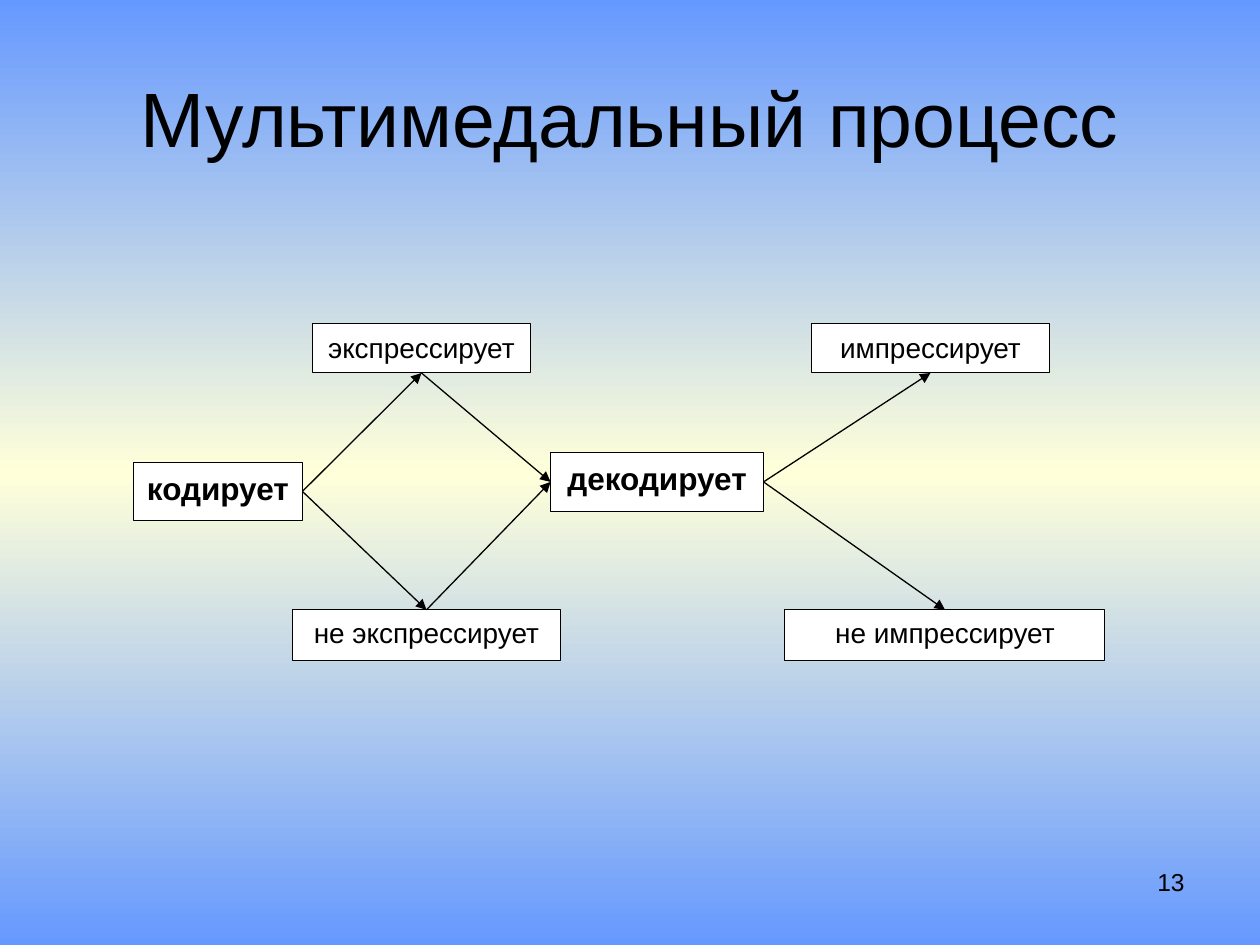
from copy import deepcopy
from dataclasses import dataclass

from pptx import Presentation
from pptx.dml.color import RGBColor as RGB
from pptx.enum.shapes import MSO_CONNECTOR as Conn, MSO_SHAPE as Kind
from pptx.enum.text import MSO_ANCHOR as Anchor, PP_ALIGN as Align
from pptx.oxml.ns import qn
from pptx.oxml.xmlchemy import OxmlElement as Elem
from pptx.shapes.autoshape import Shape
from pptx.slide import Slide
from pptx.util import Inches, Pt


@dataclass(frozen=True)
class Theme:
    font: str = "Arial"
    ink: RGB = RGB(0, 0, 0)
    box: RGB = RGB(255, 255, 255)
    sky: RGB = RGB(0x66, 0x99, 0xFF)
    glow: RGB = RGB(0xFF, 0xFF, 0xD9)
    title: int = 44
    main: int = 18
    state: int = 16
    page: int = 14
    edge: float = 0.5
    arrow: float = 0.75


@dataclass(frozen=True)
class Node:
    text: str
    left: float
    top: float
    width: float
    height: float
    main: bool = False


@dataclass(frozen=True)
class Link:
    start: str
    out: int
    end: str
    into: int


THEME = Theme()

# Connection sites of a rectangle
TOP, LEFT, BOTTOM, RIGHT = range(4)

# Rows of the two outcomes
UPPER, LOWER = 2.57, 4.84

NODES = {
    "express": Node("экспрессирует", 2.48, UPPER, 1.73, 0.39),
    "code": Node("кодирует", 1.06, 3.67, 1.34, 0.46, True),
    "no_express": Node("не экспрессирует", 2.32, LOWER, 2.13, 0.4),
    "impress": Node("импрессирует", 6.44, UPPER, 1.89, 0.39),
    "no_impress": Node("не импрессирует", 6.23, LOWER, 2.54, 0.4),
    "decode": Node("декодирует", 4.37, 3.59, 1.69, 0.47, True),
}

LINKS = [
    Link("code", RIGHT, "no_express", TOP),
    Link("code", RIGHT, "express", BOTTOM),
    Link("express", BOTTOM, "decode", LEFT),
    Link("no_express", TOP, "decode", LEFT),
    Link("decode", RIGHT, "impress", BOTTOM),
    Link("decode", RIGHT, "no_impress", TOP),
]


def paint_back(slide: Slide) -> None:
    fill = slide.background.fill
    fill.gradient()
    fill.gradient_angle = 270
    # The default gradient has two stops; add a middle one
    first = slide.element.find(".//" + qn("a:gs"))
    first.addnext(deepcopy(first))
    colors = (THEME.sky, THEME.glow, THEME.sky)
    for i, (stop, color) in enumerate(zip(fill.gradient_stops, colors)):
        stop.position = i / 2
        stop.color.rgb = color


def write(shape: Shape, text: str, size: int, align: Align,
          anchor: Anchor = Anchor.TOP, bold: bool = False, wrap: bool = True) -> None:
    frame = shape.text_frame
    frame.word_wrap = wrap
    frame.vertical_anchor = anchor
    para = frame.paragraphs[0]
    para.alignment = align
    run = para.add_run()
    run.text = text
    font = run.font
    font.name, font.size, font.bold = THEME.font, Pt(size), bold
    font.color.rgb = THEME.ink


def add_node(slide: Slide, node: Node) -> Shape:
    area = map(Inches, (node.left, node.top, node.width, node.height))
    shape = slide.shapes.add_shape(Kind.RECTANGLE, *area)
    shape.shadow.inherit = False
    shape.fill.solid()
    shape.fill.fore_color.rgb = THEME.box
    shape.line.color.rgb = THEME.ink
    shape.line.width = Pt(THEME.edge)
    size = THEME.main if node.main else THEME.state
    write(shape, node.text, size, Align.CENTER, bold=node.main, wrap=False)
    return shape


def add_link(slide: Slide, link: Link, boxes: dict[str, Shape]) -> None:
    line = slide.shapes.add_connector(Conn.STRAIGHT, 0, 0, 0, 0)
    line.begin_connect(boxes[link.start], link.out)
    line.end_connect(boxes[link.end], link.into)
    line.line.color.rgb = THEME.ink
    line.line.width = Pt(THEME.arrow)
    # Arrowhead, and no shadow
    tip = Elem("a:tailEnd")
    tip.set("type", "triangle")
    line.line._get_or_add_ln().append(tip)
    line.element.spPr.append(Elem("a:effectLst"))


def main() -> None:
    deck = Presentation()
    deck.slide_width, deck.slide_height = Inches(10), Inches(7.5)
    slide = deck.slides.add_slide(deck.slide_layouts[6])
    paint_back(slide)

    # Title and page number
    title = slide.shapes.add_textbox(Inches(0.5), Inches(0.3), Inches(9), Inches(1.25))
    write(title, "Мультимедальный процесс", THEME.title, Align.CENTER, Anchor.MIDDLE)
    page = slide.shapes.add_textbox(Inches(7.17), Inches(6.83), Inches(2.33), Inches(0.52))
    write(page, "13", THEME.page, Align.RIGHT)

    # Process diagram
    boxes = {name: add_node(slide, node) for name, node in NODES.items()}
    for link in LINKS:
        add_link(slide, link, boxes)

    deck.save("out.pptx")


if __name__ == "__main__":
    main()
